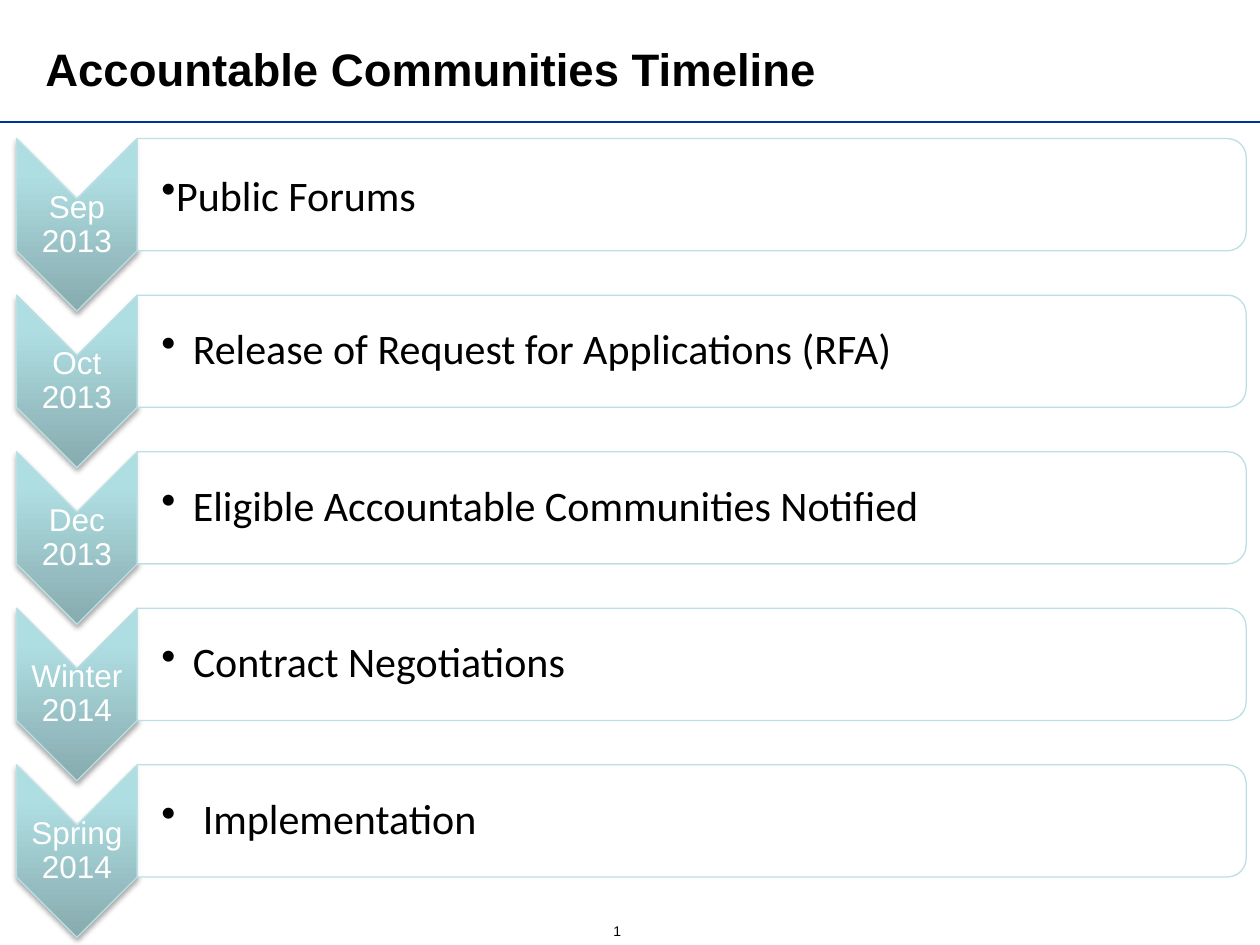
import lxml.etree
import pptx
import pptx.dml.color
import pptx.enum.shapes
import pptx.enum.text
import pptx.oxml
import pptx.oxml.ns
import pptx.util

Inches = pptx.util.Inches
Pt = pptx.util.Pt
SHAPES = pptx.enum.shapes.MSO_SHAPE
ALIGN = pptx.enum.text.PP_ALIGN
MIDDLE = pptx.enum.text.MSO_ANCHOR.MIDDLE

PALE_TEAL = "BBE0E3"
GRADIENT_STOPS = [(0, "87ABAE"), (80, "AFDEE2"), (100, "AFE0E4")]
FIRST_TOP, LAST_TOP = 1.1, 6.07
MILESTONES = [
    ("Sep 2013", "Public Forums", 0),
    ("Oct 2013", "Release of Request for Applications (RFA)", 0.25),
    ("Dec 2013", "Eligible Accountable Communities Notified", 0.25),
    ("Winter 2014", "Contract Negotiations", 0.25),
    ("Spring 2014", "Implementation", 0.33),
]


def rgb(value):
    """Return the colour for a hex string."""
    return pptx.dml.color.RGBColor.from_string(value)


def drawing_xml(body):
    """Parse one DrawingML element, given without its namespace declaration."""
    name, rest = body[:body.index(" ")], body[body.index(" "):]
    return pptx.oxml.parse_xml(f"{name} {pptx.oxml.ns.nsdecls('a')}{rest}")


def format_text(paragraph, font_name, size, color, bold=False):
    """Format every run of a paragraph."""
    for run in paragraph.runs:
        run.font.name = font_name
        run.font.size = Pt(size)
        run.font.bold = bold
        run.font.color.rgb = rgb(color)


def add_label(slide, box, text, margins):
    """Add a wrapped, vertically centred text box and return its paragraph."""
    frame = slide.shapes.add_textbox(*map(Inches, box)).text_frame
    frame.word_wrap = True
    frame.vertical_anchor = MIDDLE
    (frame.margin_left, frame.margin_top,
     frame.margin_right, frame.margin_bottom) = map(Inches, margins)
    frame.text = text
    return frame.paragraphs[0]


def add_turned_shape(slide, preset, box):
    """Add a shape turned a quarter so that it covers the given box."""
    left, top, width, height = box
    offset = (width - height) / 2
    shape = slide.shapes.add_shape(
        preset, Inches(left + offset), Inches(top - offset), Inches(height), Inches(width))
    shape.rotation = 90
    shape.shadow.inherit = False
    shape.fill.solid()
    shape.fill.fore_color.rgb = rgb("FFFFFF")
    shape.line.color.rgb = rgb(PALE_TEAL)
    shape.line.width = Pt(0.75)
    return shape


def add_date_chevron(slide, box, date):
    """Add the shaded chevron with its date."""
    left, top, width, height = box
    properties = add_turned_shape(slide, SHAPES.CHEVRON, box)._element.spPr
    stops = "".join(
        f'<a:gs pos="{position * 1000}"><a:srgbClr val="{color}"/></a:gs>'
        for position, color in GRADIENT_STOPS)
    properties.replace(
        properties.find(pptx.oxml.ns.qn("a:solidFill")),
        drawing_xml(f'<a:gradFill rotWithShape="0"><a:gsLst>{stops}</a:gsLst>'
                    '<a:lin ang="16200000" scaled="0"/></a:gradFill>'))
    properties.find(pptx.oxml.ns.qn("a:effectLst")).append(drawing_xml(
        f'<a:outerShdw blurRad="{Pt(3.1)}" dist="{Pt(1.8)}" dir="5400000" rotWithShape="0">'
        '<a:srgbClr val="000000"><a:alpha val="35000"/></a:srgbClr></a:outerShdw>'))
    label = add_label(slide, (left, top + 0.48, width, height - 0.96), date, [0.01] * 4)
    label.alignment = ALIGN.CENTER
    label.line_spacing = 0.9
    format_text(label, "Arial", 18, "FFFFFF")


def add_event_bar(slide, box, event, indent):
    """Add the outlined bar with its bulleted event."""
    left, top, width, height = box
    bar = add_turned_shape(slide, SHAPES.ROUND_2_SAME_RECTANGLE, box)
    white = bar._element.spPr.find(pptx.oxml.ns.qn("a:solidFill"))[0]
    lxml.etree.SubElement(white, pptx.oxml.ns.qn("a:alpha"), val="90000")
    label = add_label(slide, (left, top + 0.04, width - 0.04, height - 0.08),
                      event, (0.19, 0.02, 0.02, 0.02))
    properties = label._p.get_or_add_pPr()
    properties.set("marL", str(Inches(indent)))
    properties.set("indent", str(-Inches(indent)))
    properties.append(drawing_xml('<a:buChar char="•"/>'))
    if indent:
        label.line_spacing = 0.9
    format_text(label, "Calibri", 24, "000000")


def add_header(slide, box):
    """Place the title and the rule beneath it."""
    left, top, width, height = map(Inches, box)
    title = slide.shapes.title
    title.left, title.top, title.width, title.height = left, top, width, height
    frame = title.text_frame
    frame.text = "Accountable Communities Timeline"
    frame.vertical_anchor = MIDDLE
    frame.paragraphs[0].alignment = ALIGN.LEFT
    format_text(frame.paragraphs[0], "Arial", 26, "000000", bold=True)
    rule_top = top + height + Inches(0.02)
    rule = slide.shapes.add_connector(
        pptx.enum.shapes.MSO_CONNECTOR.STRAIGHT, 0, rule_top, Inches(10), rule_top)
    rule.line.color.rgb = rgb("003399")
    rule.line.width = Pt(1.5)
    lxml.etree.SubElement(rule._element.spPr, pptx.oxml.ns.qn("a:effectLst"))


def add_timeline(slide, left, width):
    """Stack the milestones at an equal pitch."""
    pitch = (LAST_TOP - FIRST_TOP) / (len(MILESTONES) - 1)
    chevron_width = 0.96
    for row, (date, event, indent) in enumerate(MILESTONES):
        top = FIRST_TOP + row * pitch
        add_date_chevron(slide, (left, top, chevron_width, 1.37), date)
        add_event_bar(slide, (left + chevron_width, top, width - chevron_width, 0.89),
                      event, indent)


def add_page_number(slide, box):
    """Add the slide number as a field."""
    label = add_label(slide, box, "", (0.1, 0.05, 0.1, 0.05))
    label.alignment = ALIGN.CENTER
    label._p.append(drawing_xml(
        '<a:fld id="{B6F15528-21DE-4FAA-801E-634DDDAF4B2B}" type="slidenum">'
        '<a:rPr lang="en-US" sz="800"><a:solidFill><a:srgbClr val="000000"/></a:solidFill>'
        '<a:latin typeface="Arial"/></a:rPr><a:t>1</a:t></a:fld>'))


def main():
    """Build and save the timeline slide."""
    presentation = pptx.Presentation()
    presentation.slide_width, presentation.slide_height = Inches(10), Inches(7.5)
    slide = presentation.slides.add_slide(presentation.slide_layouts[5])
    add_header(slide, (0.26, 0.14, 7.6, 0.81))
    add_page_number(slide, (4.73, 7.27, 0.34, 0.23))
    add_timeline(slide, 0.13, 9.76)
    presentation.save("out.pptx")


if __name__ == "__main__":
    main()
